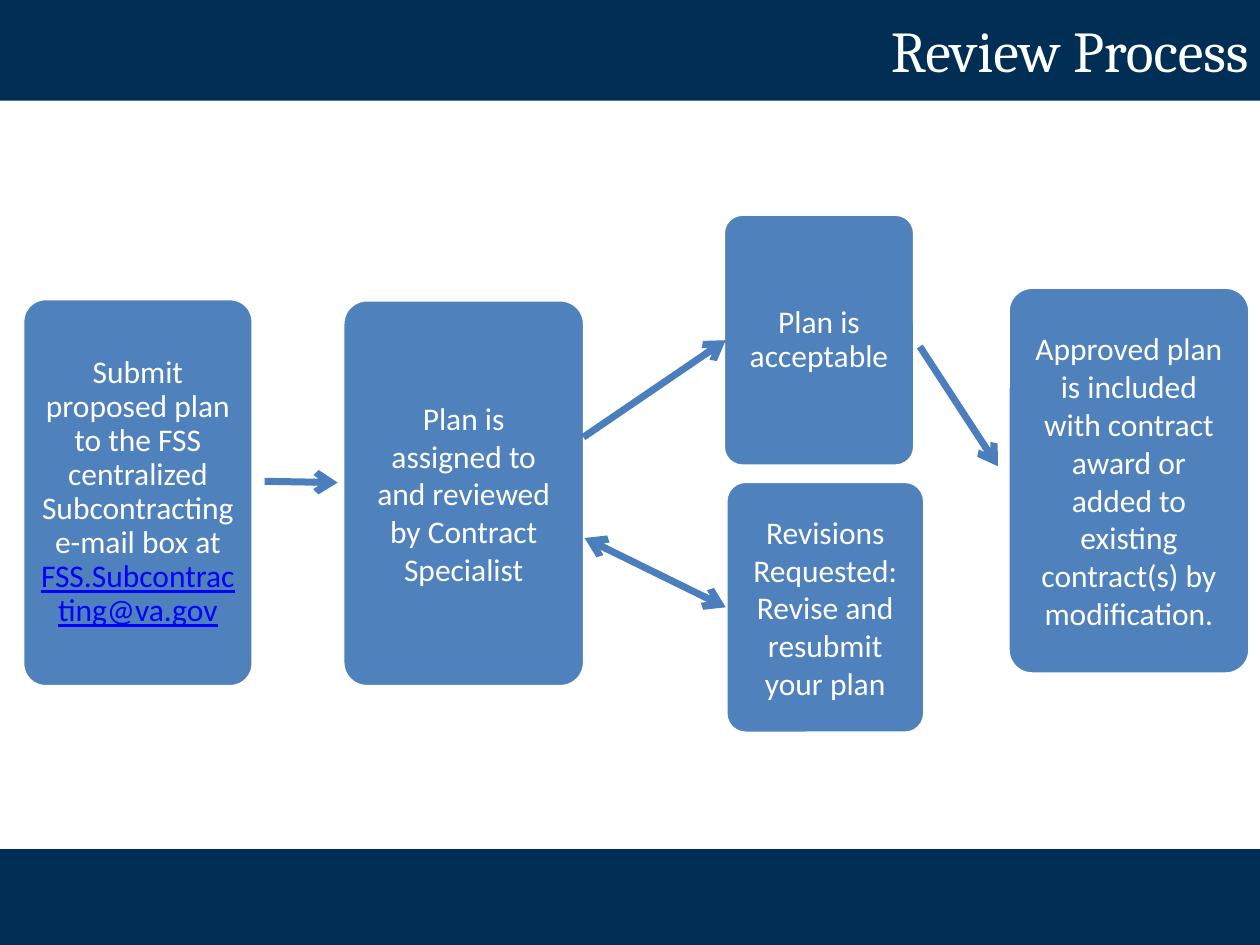
"""Build the Review Process flow slide."""
from lxml import etree
from pptx import Presentation
from pptx.dml.color import RGBColor
from pptx.enum.shapes import MSO_CONNECTOR, MSO_SHAPE
from pptx.enum.text import MSO_ANCHOR, PP_ALIGN
from pptx.oxml.ns import qn
from pptx.util import Inches, Pt

RECTANGLE = MSO_SHAPE.RECTANGLE
ROUNDED = MSO_SHAPE.ROUNDED_RECTANGLE
STRAIGHT = MSO_CONNECTOR.STRAIGHT
MIDDLE = MSO_ANCHOR.MIDDLE
CENTER, RIGHT = PP_ALIGN.CENTER, PP_ALIGN.RIGHT

COLORS = {"band": "002E55", "step": "4F81BD", "arrow": "4B7EBC",
          "white": "FFFFFF", "email": "0000FF"}
TIGHT = (0.06, 0.9)
ROOMY = (0.13, 1.0)

STEPS = [
    ((0.18, 2.37, 1.83, 3.08), TIGHT,
     "Submit proposed plan to the FSS centralized Subcontracting e-mail box at ",
     "FSS.Subcontracting@va.gov"),
    ((2.72, 2.38, 1.92, 3.07), ROOMY,
     "Plan is assigned to and reviewed by Contract Specialist", None),
    ((5.76, 3.82, 1.58, 2), ROOMY,
     "Revisions Requested: Revise and resubmit your plan", None),
    ((5.74, 1.7, 1.52, 2), TIGHT, "Plan is acceptable", None),
    ((8, 2.28, 1.92, 3.07), ROOMY,
     "Approved plan is included with contract award or added to existing "
     "contract(s) by modification.", None),
]
ARROWS = [
    ((2.1, 3.82, 2.68, 3.83), ["tailEnd"]),
    ((5.76, 4.82, 4.64, 4.27), ["headEnd", "tailEnd"]),
    ((4.63, 3.47, 5.76, 2.7), ["tailEnd"]),
    ((7.3, 2.75, 7.92, 3.7), ["tailEnd"]),
]


def color(name):
    return RGBColor.from_string(COLORS[name])


def set_margins(frame, margin):
    frame.margin_left = frame.margin_right = Inches(margin)
    frame.margin_top = frame.margin_bottom = Inches(margin)


def style_font(font, face, size, color_name):
    font.name = face
    font.size = Pt(size)
    font.color.rgb = color(color_name)


def add_filled(slide, preset, box, fill_name):
    filled = slide.shapes.add_shape(preset, *map(Inches, box))
    filled.shadow.inherit = False
    filled.fill.solid()
    filled.fill.fore_color.rgb = color(fill_name)
    return filled


def add_band(slide, top, height):
    band = add_filled(slide, RECTANGLE, (0, top, 10, height), "band")
    band.line.fill.background()


def place_title(slide, wording):
    title = slide.shapes.title
    title.left, title.top, title.width, title.height = map(
        Inches, (0.09, 0.11, 9.82, 0.56))
    frame = title.text_frame
    frame.text = wording
    frame.vertical_anchor = MIDDLE
    set_margins(frame, 0)
    heading = frame.paragraphs[0]
    heading.alignment = RIGHT
    style_font(heading.runs[0].font, "Cambria", 33, "white")
    slide.shapes._spTree.append(title._element)


def add_step(slide, box, spacing, wording, email):
    step = add_filled(slide, ROUNDED, box, "step")
    step.adjustments[0] = 0.1
    step.line.color.rgb = color("white")
    step.line.width = Pt(2)
    margin, line_spacing = spacing
    frame = step.text_frame
    frame.text = wording
    frame.word_wrap = True
    frame.vertical_anchor = MIDDLE
    set_margins(frame, margin)
    paragraph = frame.paragraphs[0]
    paragraph.alignment = CENTER
    paragraph.line_spacing = line_spacing
    style_font(paragraph.runs[0].font, "Calibri", 18, "white")
    if email:
        address = paragraph.add_run()
        address.text = email
        style_font(address.font, "Calibri", 18, "email")
        address.font.underline = True


def add_arrow(slide, ends, heads):
    arrow = slide.shapes.add_connector(STRAIGHT, *map(Inches, ends))
    arrow.line.color.rgb = color("arrow")
    arrow.line.width = Pt(4)
    line = arrow.line._get_or_add_ln()
    for head in heads:
        etree.SubElement(line, qn(f"a:{head}"), type="arrow")
    etree.SubElement(arrow._element.spPr, qn("a:effectLst"))


def main():
    deck = Presentation()
    deck.slide_width, deck.slide_height = Inches(10), Inches(7.5)
    slide = deck.slides.add_slide(deck.slide_layouts[5])
    add_band(slide, 6.74, 0.76)
    add_band(slide, 0, 0.8)
    place_title(slide, "Review Process")
    for step in STEPS:
        add_step(slide, *step)
    for ends, heads in ARROWS:
        add_arrow(slide, ends, heads)
    deck.save("out.pptx")


if __name__ == "__main__":
    main()
